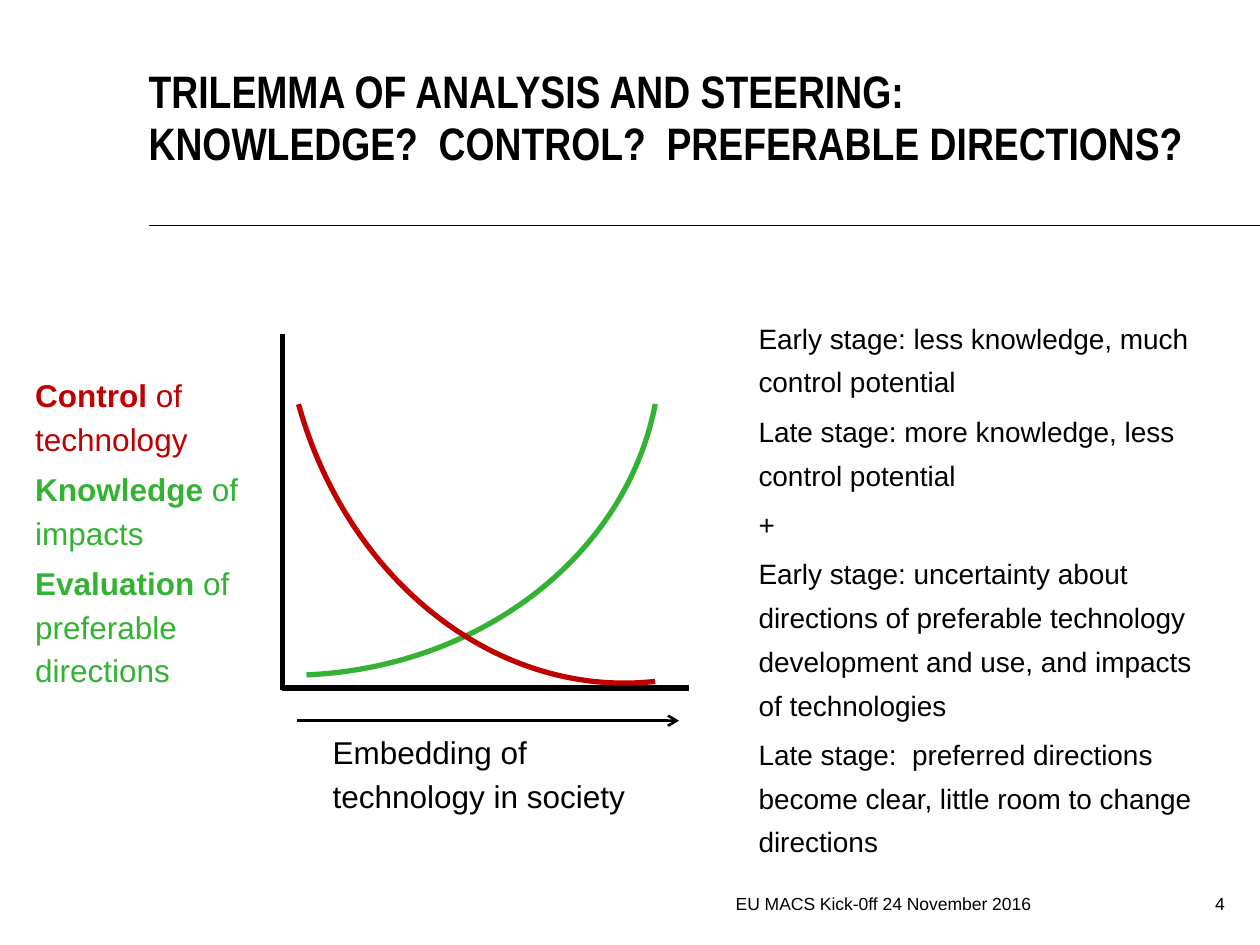
from dataclasses import dataclass

from pptx import Presentation
from pptx.dml.color import RGBColor
from pptx.enum.shapes import MSO_CONNECTOR, MSO_SHAPE
from pptx.enum.text import MSO_ANCHOR, MSO_AUTO_SIZE, PP_ALIGN
from pptx.oxml.ns import qn
from pptx.util import Inches, Pt
from lxml.etree import SubElement


@dataclass(frozen=True)
class Theme:
    ink: str = "000000"
    control: str = "C00000"
    knowledge: str = "34B233"
    body_font: str = "Arial"
    title_font: str = "Arial Narrow"
    title_size: int = 26
    label_size: int = 18
    stage_size: int = 16
    footer_size: int = 10
    body_leading: int = 25
    footer_leading: int = 15
    space_ratio: float = 0.2
    curve_width: float = 3
    arrow_width: float = 1.5
    rule_width: float = 1


THEME = Theme()


def write_text(frame, paragraphs, *, size, font=THEME.body_font, color=THEME.ink,
               bold=False, align=PP_ALIGN.LEFT, leading=THEME.body_leading,
               insets=(0, 0.05, 0.1, 0.05), anchor=MSO_ANCHOR.TOP):
    frame.word_wrap = True
    frame.auto_size = MSO_AUTO_SIZE.NONE
    frame.vertical_anchor = anchor
    frame.margin_left, frame.margin_top, frame.margin_right, frame.margin_bottom = map(Inches, insets)
    for index, runs in enumerate(paragraphs):
        paragraph = frame.paragraphs[0] if index == 0 else frame.add_paragraph()
        paragraph.alignment = align
        paragraph.line_spacing = Pt(leading)
        paragraph.space_before = Pt(size * THEME.space_ratio if index else 0)
        if isinstance(runs, str):
            runs = [(runs, color, bold)]
        for words, run_color, run_bold in runs:
            run = paragraph.add_run()
            run.text = words
            run.font.name = font
            run.font.size = Pt(size)
            run.font.bold = run_bold
            run.font.color.rgb = RGBColor.from_string(run_color)


class SlideBuilder:
    def __init__(self, slide, theme):
        self.slide = slide
        self.theme = theme

    def title(self, lines, left, top, width, height):
        heading = self.slide.shapes.title
        heading.left, heading.top = Inches(left), Inches(top)
        heading.width, heading.height = Inches(width), Inches(height)
        write_text(heading.text_frame, lines, size=self.theme.title_size,
                   font=self.theme.title_font, bold=True, insets=(0, 0, 0, 0),
                   anchor=MSO_ANCHOR.BOTTOM)

    def text(self, paragraphs, left, top, width, height, **style):
        box = self.slide.shapes.add_textbox(*map(Inches, (left, top, width, height)))
        write_text(box.text_frame, paragraphs, **style)

    def line(self, start, end, width, arrow=False):
        connector = self.slide.shapes.add_connector(
            MSO_CONNECTOR.STRAIGHT, *map(Inches, (*start, *end)))
        connector.line.color.rgb = RGBColor.from_string(self.theme.ink)
        connector.line.width = Pt(width)
        if arrow:
            SubElement(connector.line._get_or_add_ln(), qn("a:tailEnd"), type="arrow")
        SubElement(connector._element.spPr, qn("a:effectLst"))

    def curve(self, left, top, width, height, rotation, angles, color):
        arc = self.slide.shapes.add_shape(
            MSO_SHAPE.ARC, *map(Inches, (left, top, width, height)))
        arc.adjustments[0], arc.adjustments[1] = angles
        arc.rotation = rotation
        arc.fill.background()
        arc.line.color.rgb = RGBColor.from_string(color)
        arc.line.width = Pt(self.theme.curve_width)
        arc.shadow.inherit = False


def main():
    deck = Presentation()
    deck.slide_width, deck.slide_height = Inches(10), Inches(7.5)
    page = SlideBuilder(deck.slides.add_slide(deck.slide_layouts[5]), THEME)

    page.line((1.18, 1.79), (10, 1.79), THEME.rule_width)
    page.title(["TRILEMMA OF ANALYSIS AND STEERING:",
                "KNOWLEDGE?  CONTROL?  PREFERABLE DIRECTIONS?"],
               1.18, 0.55, 8.5, 0.8)

    page.line((2.24, 2.65), (2.24, 5.48), THEME.curve_width)
    page.line((2.24, 5.46), (5.47, 5.46), THEME.curve_width)
    page.curve(-0.29, -0.17, 5.15, 5.91, 90, (166.94, 214.04), THEME.knowledge)
    page.curve(2.25, -0.63, 5.17, 6.06, 171.6, (162.9, 210.16), THEME.control)

    curve_labels = [
        ("Control", " of technology", THEME.control),
        ("Knowledge", " of impacts", THEME.knowledge),
        ("Evaluation", " of preferable directions", THEME.knowledge),
    ]
    page.text([[(key, color, True), (rest, color, False)] for key, rest, color in curve_labels],
              0.28, 2.89, 1.97, 2.56, size=THEME.label_size)

    page.text(["Embedding of technology in society"], 2.64, 5.72, 2.84, 0.73,
              size=THEME.label_size)
    page.line((2.36, 5.72), (5.39, 5.72), THEME.arrow_width, arrow=True)

    page.text([
        "Early stage: less knowledge, much control potential",
        "Late stage: more knowledge, less control potential",
        "+",
        "Early stage: uncertainty about directions of preferable technology "
        "development and use, and impacts of technologies",
        "Late stage:  preferred directions become clear, little room to change directions",
    ], 6.02, 2.42, 3.62, 4.1, size=THEME.stage_size)

    footer_style = dict(size=THEME.footer_size, leading=THEME.footer_leading,
                        align=PP_ALIGN.RIGHT)
    page.text(["EU MACS Kick-0ff 24 November 2016"], 3.87, 7, 4.41, 0.52,
              insets=(0.1, 0.05, 0.1, 0.05), **footer_style)
    page.text(["4"], 9.31, 7, 0.41, 0.52, insets=(0.1, 0.05, 0, 0.05), **footer_style)

    deck.save("out.pptx")


if __name__ == "__main__":
    main()
